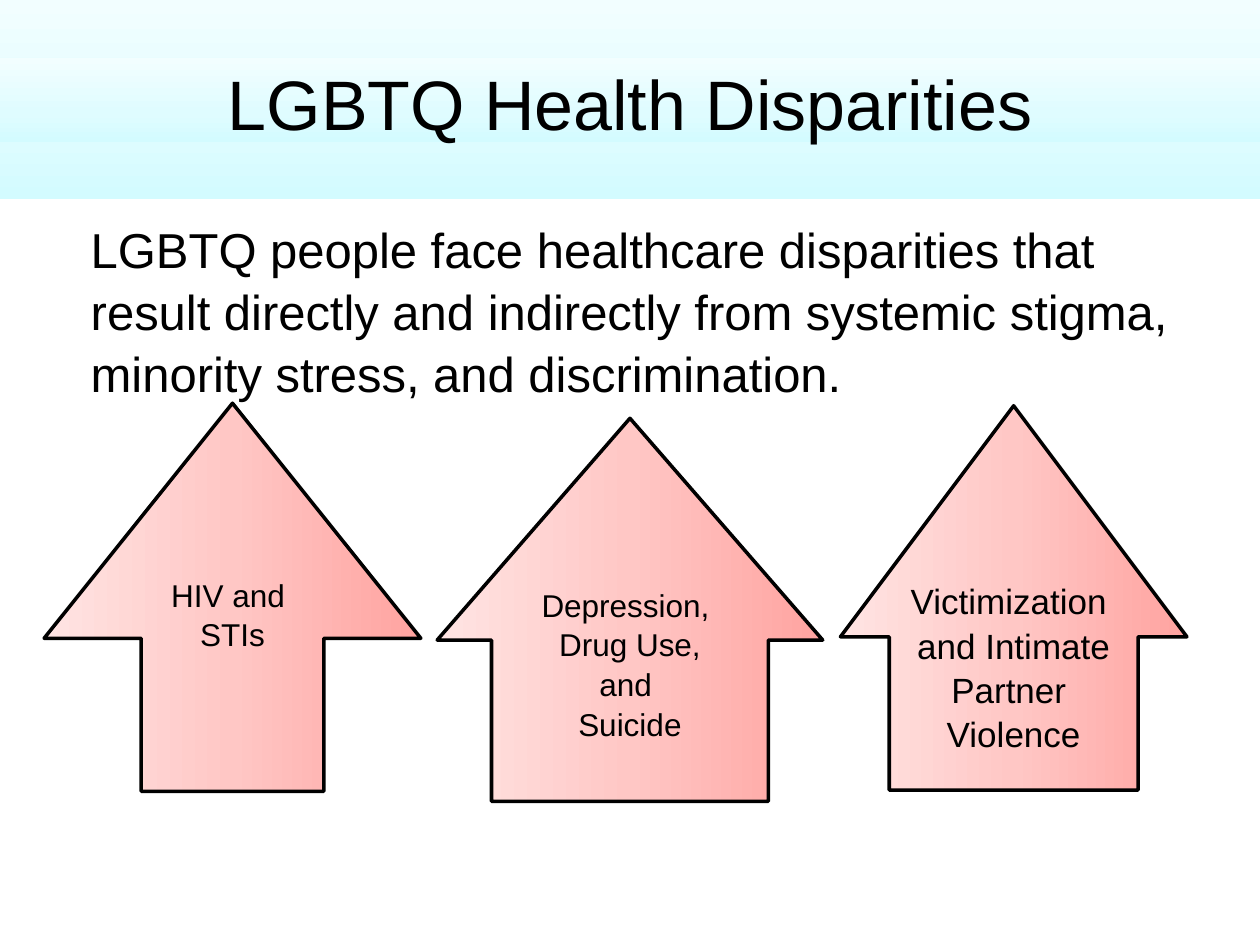
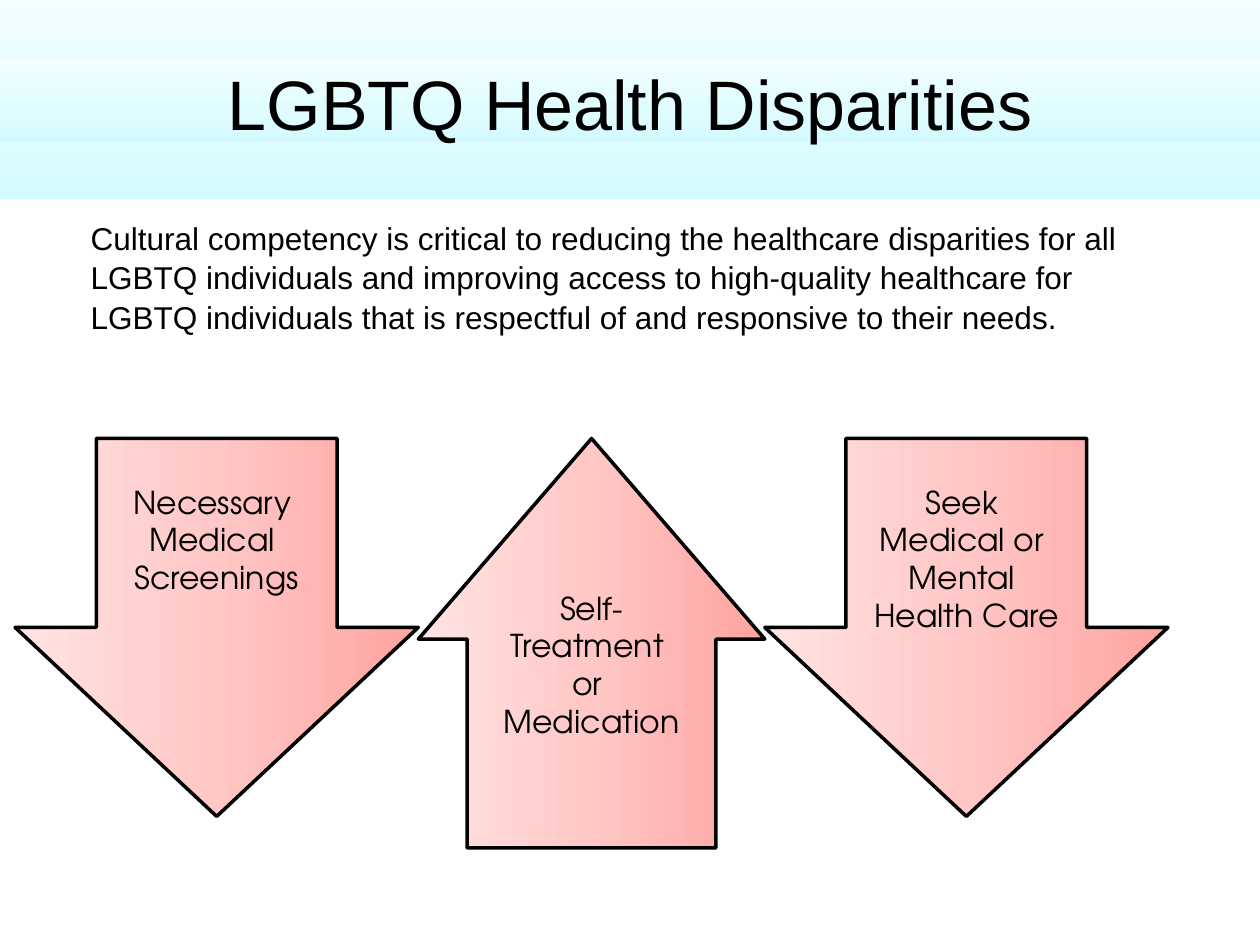
from copy import deepcopy

from pptx import Presentation
from pptx import util as u
from pptx.dml.color import RGBColor
from pptx.enum import shapes, text
from pptx.oxml.ns import qn

# Shared look
COLORS = {"ink": "000000"}
GRADIENTS = {
    "band": (90, [(0, "D3FBFF"), (0.35, "DFFCFF"), (1, "F2FEFF")]),
    "arrow": (180, [(0, "FFA3A0"), (0.5, "FFC7C5"), (1, "FFE4E3")]),
}
TITLE = "LGBTQ Health Disparities"
BODY_FONT, ARROW_FONT = "Arial", "TeX Gyre Adventor"
UP = shapes.MSO_SHAPE.UP_ARROW
DOWN = shapes.MSO_SHAPE.DOWN_ARROW
INSET = 0.05

# Grid: 100 columns by 75 rows on a 10 by 7.5 inch slide
WIDTH, HEIGHT = u.Inches(10), u.Inches(7.5)
COLUMN, ROW = WIDTH / 100, HEIGHT / 75


def grid(left, top, width, height):
    """Turn columns and rows into slide lengths."""
    return (round(left * COLUMN), round(top * ROW),
            round(width * COLUMN), round(height * ROW))


def place(shape, *cells):
    shape.left, shape.top, shape.width, shape.height = grid(*cells)


def fill_gradient(shape, name):
    angle, stops = GRADIENTS[name]
    shape.fill.gradient()
    shape.fill.gradient_angle = angle
    stop_list = shape.element.spPr.find(qn("a:gradFill")).find(qn("a:gsLst"))
    stop_list.append(deepcopy(stop_list[0]))
    for stop, (position, color) in zip(shape.fill.gradient_stops, stops):
        stop.position = position
        stop.color.rgb = RGBColor.from_string(color)


def write(shape, lines, size, font=BODY_FONT, align=text.PP_ALIGN.CENTER,
          anchor=text.MSO_ANCHOR.TOP, inset=INSET, top_inset=None):
    frame = shape.text_frame
    frame.text = "\n".join(lines)
    frame.word_wrap = True
    frame.auto_size = text.MSO_AUTO_SIZE.NONE
    frame.vertical_anchor = anchor
    frame.margin_left = frame.margin_right = frame.margin_bottom = u.Inches(inset)
    frame.margin_top = u.Inches(inset if top_inset is None else top_inset)
    for paragraph in frame.paragraphs:
        paragraph.alignment = align
        paragraph.space_before = u.Pt(0)
        paragraph.line_spacing = 1.05 if font == BODY_FONT else 1.0
        for run in paragraph.runs:
            run.font.name = font
            run.font.size = u.Pt(size)
            run.font.color.rgb = RGBColor.from_string(COLORS["ink"])


def add_band(slide):
    band = slide.shapes.add_shape(shapes.MSO_SHAPE.RECTANGLE,
                                  *grid(0, 0, 100, 15.8))
    band.shadow.inherit = False
    band.line.fill.background()
    fill_gradient(band, "band")
    slide.shapes.title.element.addprevious(band.element)


def add_body(slide, message, size, rows):
    body = slide.placeholders[1]
    place(body, 6.7, 16.7, 87.5, rows)
    write(body, [message], size, align=text.PP_ALIGN.LEFT)
    properties = body.text_frame.paragraphs[0]._p.get_or_add_pPr()
    properties.set("marL", "0")
    properties.set("indent", "0")
    properties.append(properties.makeelement(qn("a:buNone"), {}))


def add_arrow(slide, kind, cells, shaft, head, lines, size=18, font=BODY_FONT,
              top_inset=INSET):
    arrow = slide.shapes.add_shape(kind, *grid(*cells))
    arrow.adjustments[0], arrow.adjustments[1] = shaft, head
    arrow.shadow.inherit = False
    fill_gradient(arrow, "arrow")
    arrow.line.color.rgb = RGBColor.from_string(COLORS["ink"])
    arrow.line.width = u.Pt(2)
    write(arrow, lines, size, font, top_inset=top_inset)


def add_disparity_slide(presentation, message, size, body_rows):
    slide = presentation.slides.add_slide(presentation.slide_layouts[1])
    add_band(slide)
    place(slide.shapes.title, 0, 4.6, 100, 6.7)
    fill_gradient(slide.shapes.title, "band")
    write(slide.shapes.title, [TITLE], 40,
          anchor=text.MSO_ANCHOR.MIDDLE, inset=0)
    add_body(slide, message, size, body_rows)
    return slide


def main():
    presentation = Presentation()
    presentation.slide_width, presentation.slide_height = WIDTH, HEIGHT

    # Slide 1: rising health risks
    slide = add_disparity_slide(
        presentation,
        "LGBTQ people face healthcare disparities that result directly and "
        "indirectly from systemic stigma, minority stress, and discrimination.",
        28, 15.1)
    add_arrow(slide, UP, (3.5, 32, 29.9, 30.8), 0.485, 0.624,
              ["HIV and ", "STIs"], top_inset=0.45)
    add_arrow(slide, UP, (34.7, 33.2, 30.6, 30.4), 0.718, 0.579,
              ["Depression, ", "Drug Use,", "and ", "Suicide"])
    add_arrow(slide, UP, (66.7, 32.2, 27.5, 30.5), 0.718, 0.667,
              ["Victimization ", "and Intimate", "Partner ", "Violence"], size=20)

    # Slide 2: effects on seeking care
    slide = add_disparity_slide(
        presentation,
        "Cultural competency is critical to reducing the healthcare disparities "
        "for all LGBTQ individuals and improving access to high-quality "
        "healthcare for LGBTQ individuals that is respectful of and responsive "
        "to their needs.",
        18, 10.1)
    add_arrow(slide, UP, (33.2, 34.8, 27.5, 32.5), 0.718, 0.579,
              ["Self-", "Treatment ", "or ", "Medication"], font=ARROW_FONT)
    falling = [
        (1.2, ["Necessary ", "Medical ", "Screenings"]),
        (60.7, ["Seek ", "Medical or ", "Mental ", "Health Care"]),
    ]
    for left, lines in falling:
        add_arrow(slide, DOWN, (left, 34.8, 32, 30), 0.597, 0.5, lines,
                  font=ARROW_FONT, top_inset=0.35)

    presentation.save("out.pptx")


if __name__ == "__main__":
    main()
